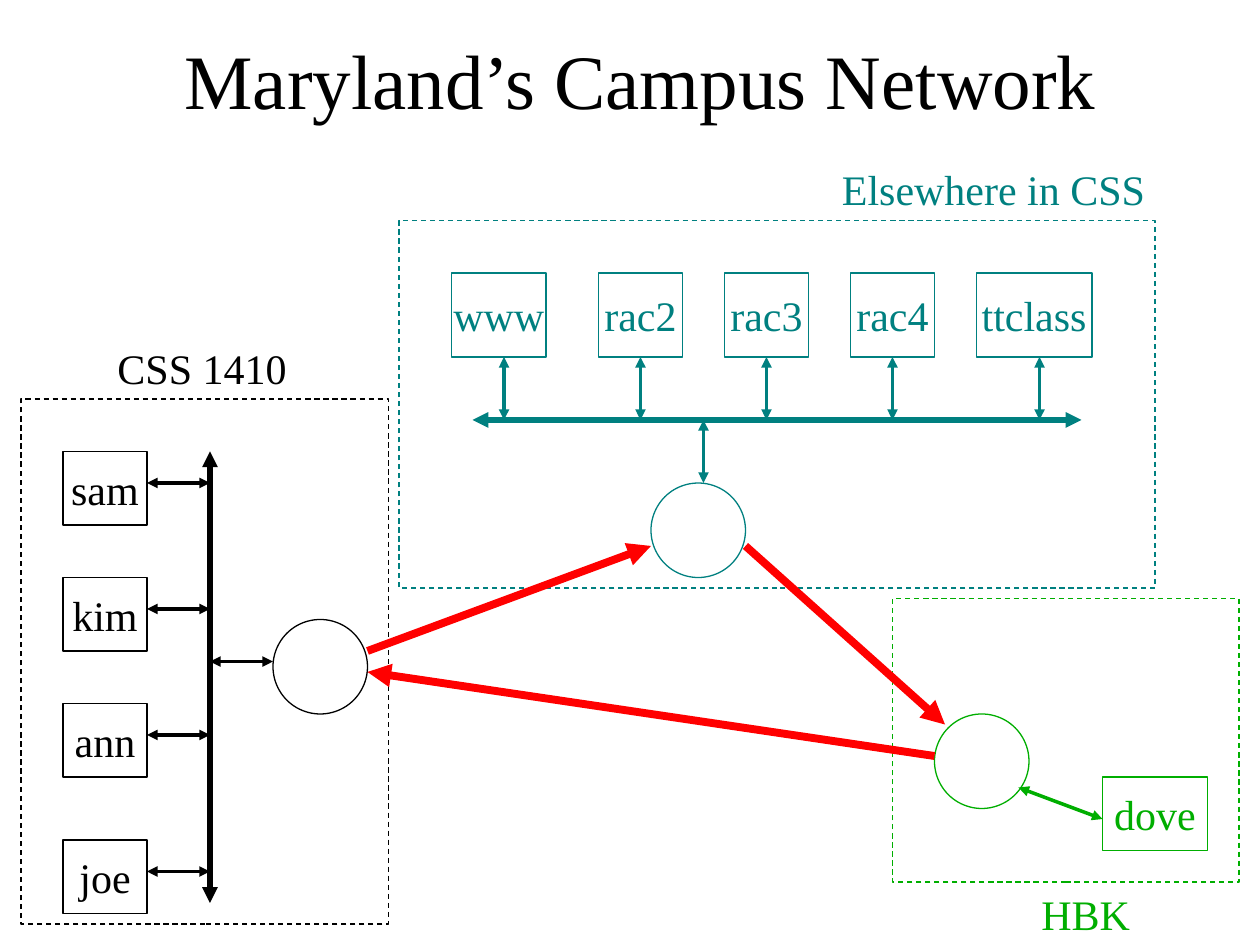
from lxml.etree import SubElement
from pptx import Presentation
from pptx.dml.color import RGBColor
from pptx.enum.dml import MSO_LINE
from pptx.enum.shapes import MSO_CONNECTOR, MSO_SHAPE
from pptx.enum.text import MSO_ANCHOR, PP_ALIGN
from pptx.oxml.ns import qn
from pptx.util import Inches, Pt

# The slide is a grid of 120 columns by 90 rows, twelve cells to the inch
COLUMNS, ROWS = 120, 90
CELL = Inches(10) / COLUMNS
ROUTER_SIZE = 9
BLACK, TEAL, GREEN, RED, WHITE = "000000", "008080", "00AE00", "FF0000", "FFFFFF"


def cells(*counts):
    return [round(count * CELL) for count in counts]


def color(hex_code):
    return RGBColor.from_string(hex_code)


def write(frame, text, ink, size=24, align=PP_ALIGN.CENTER, wrap=False):
    frame.word_wrap = wrap
    frame.vertical_anchor = MSO_ANCHOR.MIDDLE
    paragraph = frame.paragraphs[0]
    paragraph.text = text
    paragraph.alignment = align
    paragraph.font.name = "Times New Roman"
    paragraph.font.size = Pt(size)
    paragraph.font.color.rgb = color(ink)


def add_text(slide, box, text, ink, **style):
    write(slide.shapes.add_textbox(*cells(*box)).text_frame, text, ink, **style)


def add_outline(slide, kind, box, ink, width=0.75):
    outline = slide.shapes.add_shape(kind, *cells(*box))
    outline.shadow.inherit = False
    outline.fill.background()
    outline.line.color.rgb = color(ink)
    outline.line.width = Pt(width)
    return outline


def add_arrow(slide, start, end, ink, width=2, ends=("headEnd", "tailEnd")):
    arrow = slide.shapes.add_connector(MSO_CONNECTOR.STRAIGHT, *cells(*start, *end))
    arrow.line.color.rgb = color(ink)
    arrow.line.width = Pt(width)
    for end_name in ends:
        SubElement(arrow.line._get_or_add_ln(), qn(f"a:{end_name}"), type="triangle")
    SubElement(arrow._element.spPr, qn("a:effectLst"))


def add_host(slide, box, name, ink):
    host = add_outline(slide, MSO_SHAPE.RECTANGLE, box, ink, width=1)
    host.fill.solid()
    host.fill.fore_color.rgb = color(WHITE)
    write(host.text_frame, name, ink)


def add_router(slide, left, top, ink):
    add_outline(slide, MSO_SHAPE.OVAL, (left, top, ROUTER_SIZE, ROUTER_SIZE), ink)


def add_site(slide, box, name, label_box, ink):
    """Dashed border of a site, with its name outside it."""
    border = add_outline(slide, MSO_SHAPE.RECTANGLE, box, ink)
    border.line.dash_style = MSO_LINE.DASH
    add_text(slide, label_box, name, ink, align=PP_ALIGN.LEFT)


def add_lab(slide, box):
    left, top, _, height = box
    add_site(slide, box, "CSS 1410", (left + 8, top - 6, 18.6, 6), BLACK)
    bus = left + 18
    # Hosts stacked beside a vertical bus
    for name, row in (("sam", 5), ("kim", 17), ("ann", 29), ("joe", 42)):
        add_host(slide, (left + 4, top + row, 8, 7), name, BLACK)
        link = top + row + 3
        add_arrow(slide, (left + 12, link), (bus, link), BLACK)
    add_arrow(slide, (bus, top + 5), (bus, top + height - 2), BLACK, width=3)
    # Router
    add_arrow(slide, (bus, top + 25), (left + 24, top + 25), BLACK)
    add_router(slide, left + 24, top + 21, BLACK)


def add_servers(slide, box):
    left, top, width, _ = box
    add_site(slide, box, "Elsewhere in CSS", (left + 41, top - 6, 31.3, 6), TEAL)
    bus = top + 19
    # Hosts in a row above a horizontal bus: column, width, link column
    hosts = (("www", 5, 9, 10), ("rac2", 19, 8, 23), ("rac3", 31, 8, 35),
             ("rac4", 43, 8, 47), ("ttclass", 55, 11, 61))
    for name, column, host_width, link in hosts:
        add_host(slide, (left + column, top + 5, host_width, 8), name, TEAL)
        add_arrow(slide, (left + link, top + 13), (left + link, bus), TEAL)
    add_arrow(slide, (left + 7, bus), (left + width - 7, bus), TEAL, width=3)
    # Router
    add_arrow(slide, (left + 29, bus), (left + 29, top + 25), TEAL)
    add_router(slide, left + 24, top + 25, TEAL)


def add_remote(slide, box):
    left, top, _, height = box
    add_site(slide, box, "HBK", (left + 13, top + height, 11, 6), GREEN)
    add_host(slide, (left + 20, top + 17, 10, 7), "dove", GREEN)
    add_arrow(slide, (left + 12, top + 18), (left + 20, top + 21), GREEN)
    add_router(slide, left + 4, top + 11, GREEN)


def add_ring(slide, box):
    """One-way links from router to router, around the three sites."""
    left, top, width, height = box
    for start, end in (((0, 10), (27, 0)), ((36, 0), (width, 17)),
                       ((54, height), (0, 12))):
        add_arrow(slide, (left + start[0], top + start[1]),
                  (left + end[0], top + end[1]), RED, width=4.5, ends=("tailEnd",))


def main():
    deck = Presentation()
    deck.slide_width, deck.slide_height = cells(COLUMNS, ROWS)
    slide = deck.slides.add_slide(deck.slide_layouts[6])
    add_text(slide, (10, 0, 102, 15), "Maryland’s Campus Network", BLACK,
             size=44, wrap=True)
    add_lab(slide, (2, 38, 35, 50))
    add_servers(slide, (38, 21, 72, 35))
    add_remote(slide, (85, 57, 33, 27))
    add_ring(slide, (35, 52, 55, 20))
    deck.save("out.pptx")


if __name__ == "__main__":
    main()
